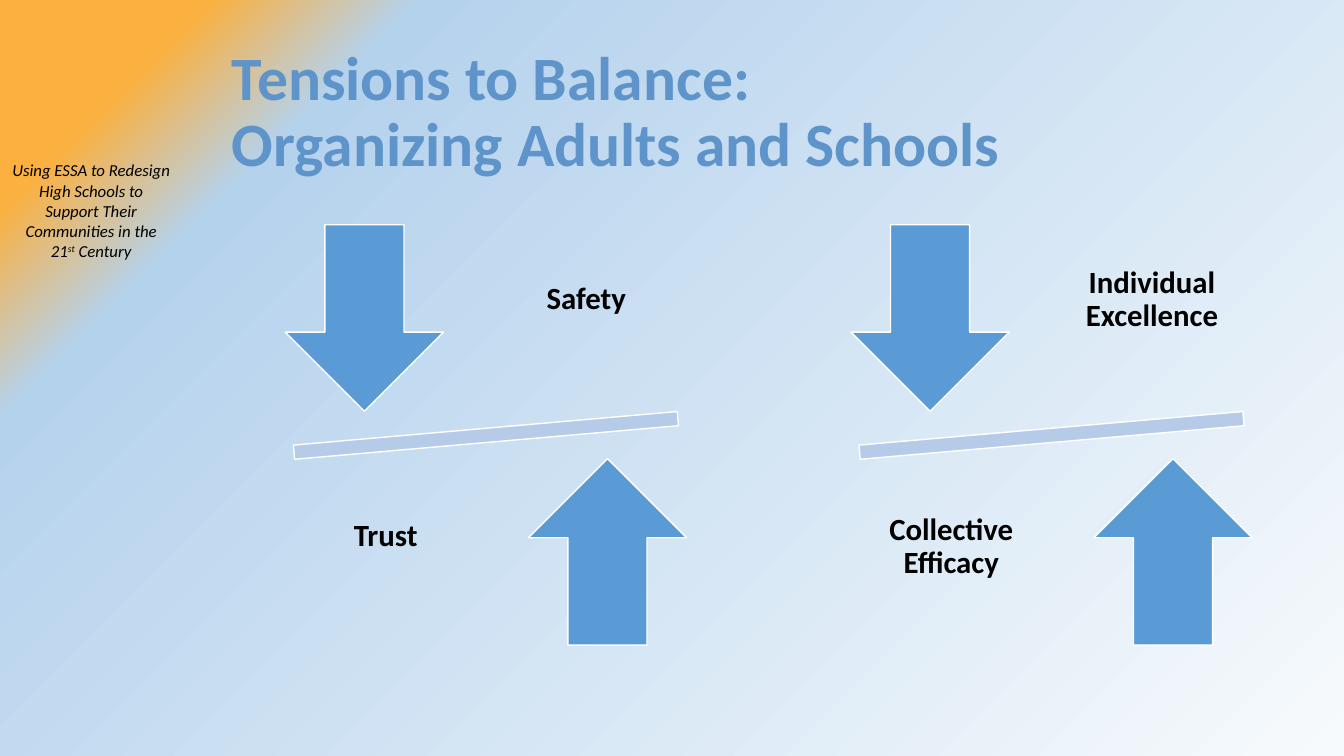
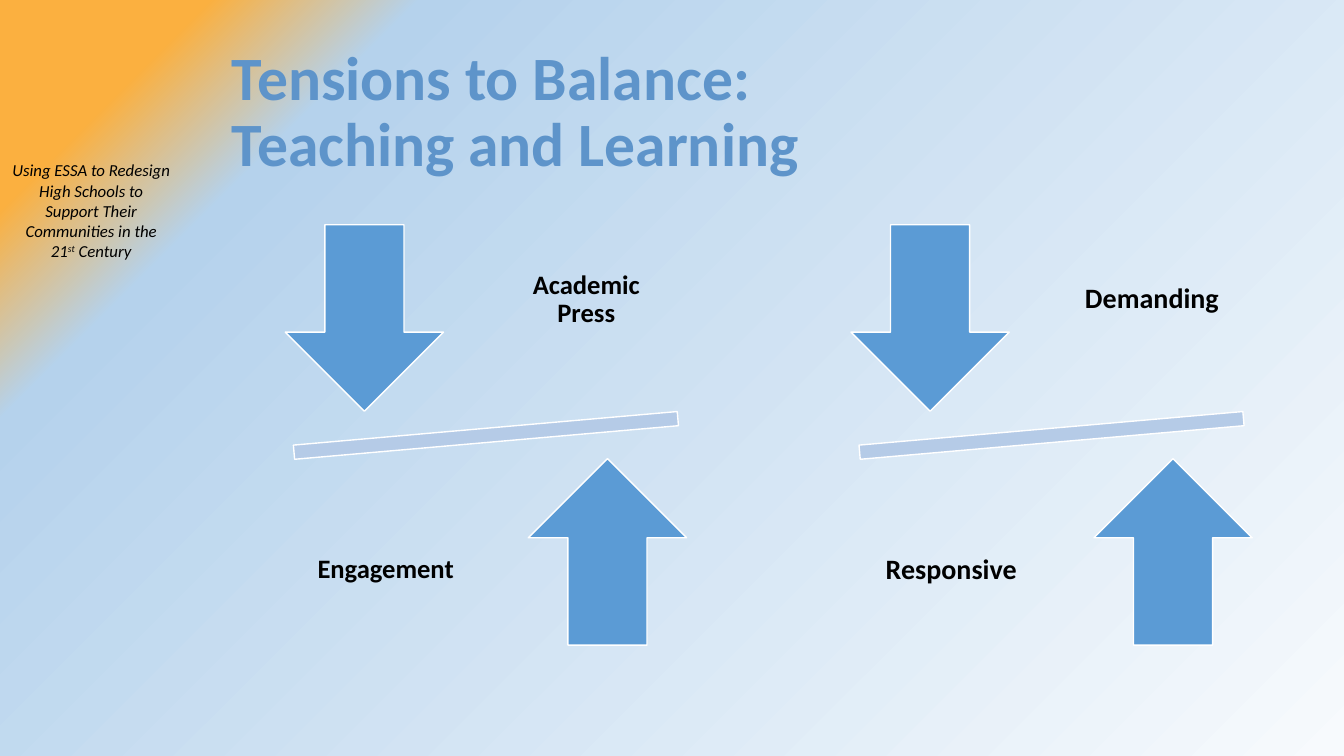
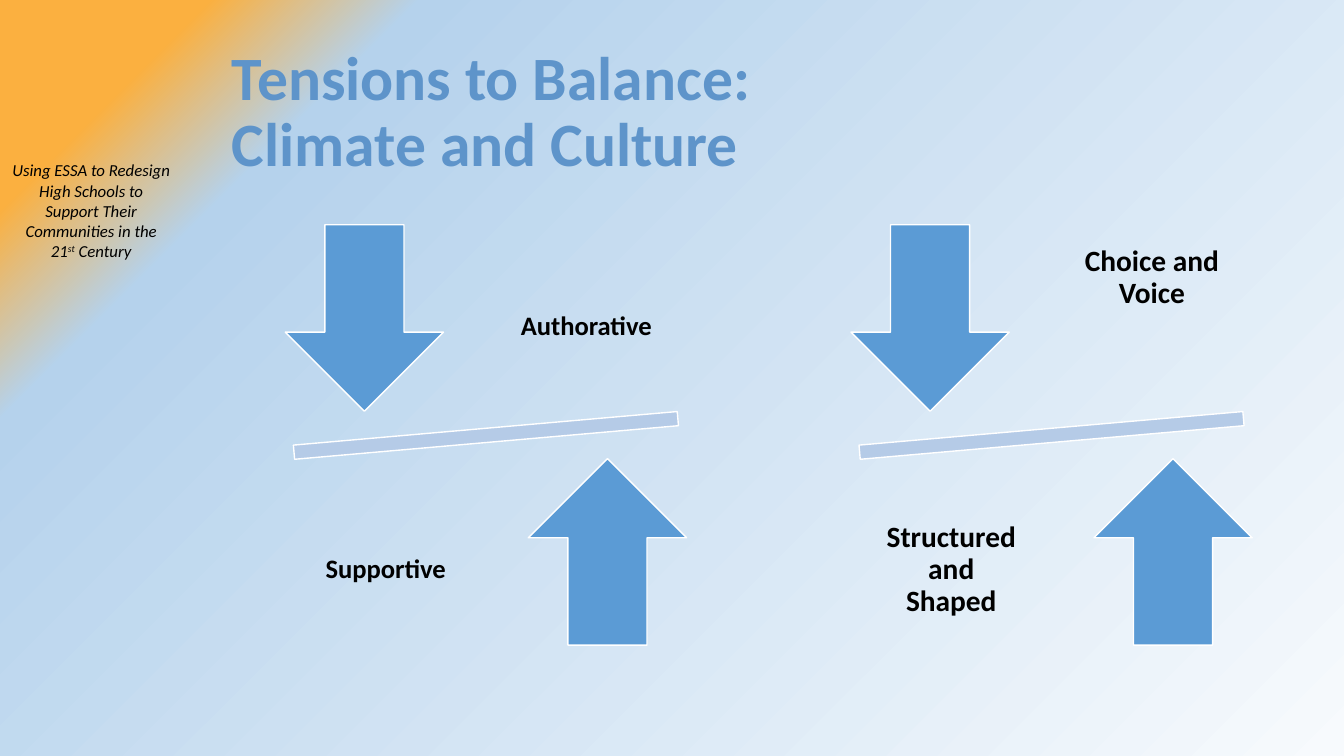
from dataclasses import dataclass

from pptx import Presentation
from pptx.dml.color import RGBColor
from pptx.enum.shapes import MSO_SHAPE as Shape
from pptx.enum.text import MSO_ANCHOR as Anchor, MSO_AUTO_SIZE as AutoSize, PP_ALIGN as Align
from pptx.oxml import parse_xml
from pptx.oxml.ns import nsdecls, qn
from pptx.util import Inches, Pt


@dataclass(frozen=True)
class Theme:
    font: str = "Calibri"
    title_color: str = "5E94CA"
    text_color: str = "000000"
    arrow_color: str = "5B9BD5"
    beam_color: str = "B5CBE7"
    outline_color: str = "FFFFFF"
    title_size: int = 44
    note_size: int = 12
    line_spacing: float = 0.9
    backdrop: tuple = (
        (0, "F7FAFD", 100),
        (80, "B5D2EC", 50),
        (90, "FBB040", 55),
        (100, "FBB040", 100),
    )


@dataclass(frozen=True)
class Label:
    text: str
    size: int
    lift: float = 0


THEME = Theme()
TITLE_ONLY = 5
BALANCE_LEFTS = (2.22, 7.83)
BALANCE_TOP = 2

SLIDES = (
    ("Organizing Adults and Schools", (
        (Label("Safety", 22), Label("Trust", 22, 0.67)),
        (Label("Individual Excellence", 22), Label("Collective Efficacy", 22, 0.45)),
    )),
    ("Teaching and Learning", (
        (Label("Academic Press", 19), Label("Engagement", 19)),
        (Label("Demanding", 20), Label("Responsive", 20)),
    )),
    ("Climate and Culture", (
        (Label("Authorative", 19, -0.54), Label("Supportive", 19)),
        (Label("Choice and Voice", 21, 0.44), Label("Structured and Shaped", 21)),
    )),
)


def format_runs(paragraph, size, color, bold=False, italic=False):
    for run in paragraph.runs:
        font = run.font
        font.name, font.size = THEME.font, Pt(size)
        font.bold, font.italic = bold, italic
        font.color.rgb = RGBColor.from_string(color)


def paint_backdrop(master):
    master.background.fill.solid()
    backdrop = master.element.find(".//" + qn("p:bgPr"))
    stops = "".join(
        f'<a:gs pos="{pos * 1000}"><a:srgbClr val="{color}">'
        f'<a:alpha val="{alpha * 1000}"/></a:srgbClr></a:gs>'
        for pos, color, alpha in THEME.backdrop
    )
    gradient = parse_xml(
        f'<a:gradFill {nsdecls("a")} rotWithShape="1"><a:gsLst>{stops}</a:gsLst>'
        '<a:path path="circle"><a:fillToRect l="100000" t="100000"/></a:path>'
        '<a:tileRect r="-100000" b="-100000"/></a:gradFill>'
    )
    backdrop.replace(backdrop[0], gradient)


def move_note_to_master(slide, master):
    note = slide.shapes.add_textbox(Inches(0.02), Inches(1.54), Inches(1.77), Inches(1.11))
    frame = note.text_frame
    frame.word_wrap = True
    frame.auto_size = AutoSize.SHAPE_TO_FIT_TEXT
    paragraph = frame.paragraphs[0]
    paragraph.text = "Using ESSA to Redesign High Schools to Support Their Communities in the 21"
    paragraph.alignment = Align.CENTER
    ordinal = paragraph.add_run()
    ordinal.text = "st"
    paragraph.add_run().text = " Century"
    format_runs(paragraph, THEME.note_size, THEME.text_color, italic=True)
    ordinal.font._element.set("baseline", "30000")
    master.shapes.element.append(note.element)


def write_title(slide, topic):
    title = slide.shapes.title
    title.left, title.top = Inches(2.2), Inches(0.4)
    title.width, title.height = Inches(10.83), Inches(1.45)
    frame = title.text_frame
    frame.text = f"Tensions to Balance:\v{topic}"
    frame.word_wrap = True
    frame.auto_size = AutoSize.NONE
    frame.vertical_anchor = Anchor.MIDDLE
    paragraph = frame.paragraphs[0]
    paragraph.alignment = Align.LEFT
    paragraph.line_spacing = THEME.line_spacing
    format_runs(paragraph, THEME.title_size, THEME.title_color, bold=True)


def add_part(group, kind, left, top, width, height, color):
    part = group.shapes.add_shape(kind, Inches(left), Inches(top), Inches(width), Inches(height))
    part.shadow.inherit = False
    part.fill.solid()
    part.fill.fore_color.rgb = RGBColor.from_string(color)
    part.line.color.rgb = RGBColor.from_string(THEME.outline_color)
    part.line.width = Pt(1)
    return part


def add_label(group, label, left, top):
    box = group.shapes.add_textbox(Inches(left), Inches(top), Inches(1.67), Inches(1.95))
    frame = box.text_frame
    frame.text = label.text
    frame.word_wrap = True
    frame.vertical_anchor = Anchor.MIDDLE
    inset = Pt(label.size * 0.56)
    frame.margin_left = frame.margin_right = inset
    frame.margin_top = inset + Inches(max(-label.lift, 0))
    frame.margin_bottom = inset + Inches(max(label.lift, 0))
    paragraph = frame.paragraphs[0]
    paragraph.alignment = Align.CENTER
    paragraph.line_spacing = THEME.line_spacing
    format_runs(paragraph, label.size, THEME.text_color, bold=True)


def add_balance(slide, left, top, upper, lower):
    group = slide.shapes.add_group_shape()
    beam = add_part(group, Shape.MATH_MINUS, left, top + 2.02, 5.2, 0.6, THEME.beam_color)
    beam.rotation = 355
    add_part(group, Shape.DOWN_ARROW, left + 0.61, top + 0.23, 1.57, 1.85, THEME.arrow_color)
    add_label(group, upper, left + 2.76, top)
    add_part(group, Shape.UP_ARROW, left + 3.02, top + 2.55, 1.57, 1.85, THEME.arrow_color)
    add_label(group, lower, left + 0.77, top + 2.68)


def main():
    prs = Presentation()
    prs.slide_width, prs.slide_height = Inches(13.33), Inches(7.5)
    paint_backdrop(prs.slide_master)
    for topic, balances in SLIDES:
        slide = prs.slides.add_slide(prs.slide_layouts[TITLE_ONLY])
        write_title(slide, topic)
        for left, (upper, lower) in zip(BALANCE_LEFTS, balances):
            add_balance(slide, left, BALANCE_TOP, upper, lower)
    move_note_to_master(prs.slides[0], prs.slide_master)
    prs.save("out.pptx")


if __name__ == "__main__":
    main()
